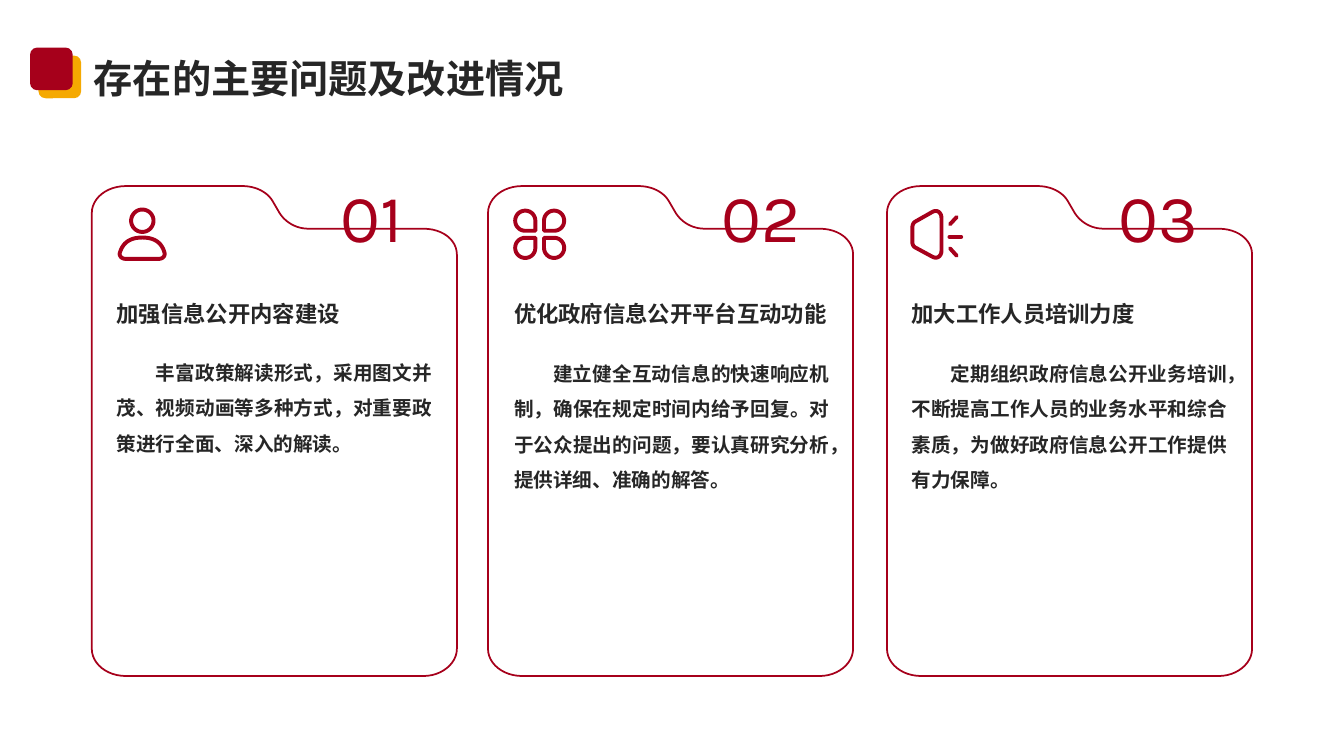
import pptx
import pptx.util
import pptx.dml.color
import pptx.enum.shapes
import pptx.enum.text
import pptx.oxml.ns
import lxml.etree

Pt = pptx.util.Pt
colour = pptx.dml.color.RGBColor.from_string
SHAPE = pptx.enum.shapes.MSO_SHAPE
ALIGN = pptx.enum.text.PP_ALIGN
ANCHOR = pptx.enum.text.MSO_ANCHOR
qn = pptx.oxml.ns.qn
RED, GOLD, DARK, WHITE = "A6001B", "F5A901", "262626", "FFFFFF"
CHINESE = "Noto Sans CJK SC"

deck = pptx.Presentation()
deck.slide_width, deck.slide_height = Pt(960), Pt(540)
slide = deck.slides.add_slide(deck.slide_layouts[5])
shapes = slide.shapes


def outline(left, top, *contours):
    """Closed contours in one shape: a pair is a line, six numbers are a Bezier curve."""
    builder = None
    for start, *segments in contours:
        points = [start]
        for segment in segments:
            if len(segment) == 2:
                points.append(segment)
                continue
            (x0, y0), (x1, y1, x2, y2, x3, y3) = points[-1], segment
            for step in range(1, 13):
                t = step / 12
                a, b, c, d = (1 - t) ** 3, 3 * t * (1 - t) ** 2, 3 * t * t * (1 - t), t ** 3
                points.append((a * x0 + b * x1 + c * x2 + d * x3,
                               a * y0 + b * y1 + c * y2 + d * y3))
        placed = [(Pt(left + x), Pt(top + y)) for x, y in points]
        if builder is None:
            builder = shapes.build_freeform(*placed[0], scale=1.0)
        else:
            builder.move_to(*placed[0])
        builder.add_line_segments(placed[1:], close=True)
    return builder.convert_to_shape()


def write(box, text, size, font, ink, bold, spacing, align, anchor):
    frame = box.text_frame
    frame.text = text
    frame.word_wrap = True
    frame.auto_size = pptx.enum.text.MSO_AUTO_SIZE.NONE
    frame.vertical_anchor = anchor
    frame.margin_left = frame.margin_top = frame.margin_right = frame.margin_bottom = 0
    paragraph = frame.paragraphs[0]
    paragraph.alignment, paragraph.line_spacing = align, spacing
    run = paragraph.runs[0]
    run.font.size, run.font.bold, run.font.name = Pt(size), bold, font
    run.font.color.rgb = colour(ink)
    lxml.etree.SubElement(run.font._element, qn("a:ea")).set("typeface", font)
    return paragraph


# Title and its marker
title = shapes.title
title.left, title.top, title.width, title.height = Pt(67), Pt(35.3), Pt(840), Pt(36.7)
write(title, "存在的主要问题及改进情况", 28, CHINESE, DARK, True, 1.1, ALIGN.LEFT, ANCHOR.MIDDLE)
for left, top, fill in ((27.5, 39.7, GOLD), (21.5, 34, RED)):
    marker = shapes.add_shape(SHAPE.ROUNDED_RECTANGLE, Pt(left), Pt(top), Pt(30.5), Pt(30.5))
    marker.shadow.inherit = False
    marker.fill.solid()
    marker.fill.fore_color.rgb = colour(fill)
    marker.line.fill.background()

# Folder cards
folder_path = (
    (24.5, 0), (107.5, 0), (117, 0, 125.5, 4.3, 129.2, 10.8),
    (134.2, 19.4), (138.5, 26, 146, 30.5, 155, 30.5),
    (237, 30.5), (250.3, 30.5, 260.8, 38.2, 260.8, 49),
    (260.8, 330.5), (260.8, 341.3, 249.8, 350, 236.9, 350),
    (24.5, 350), (10.8, 350, 0, 341.3, 0, 330.5),
    (0, 19.4), (0, 8.6, 10.8, 0, 24.5, 0))
folders = [outline(left, 132.9, folder_path) for left in (65.6, 348.6, 633.6)]

# Person icon: head and shoulders
person = outline(
    85.6, 149.7,
    ((16.1, 0), (20.5, 0, 24.1, 3.6, 24.1, 8), (24.1, 12.4, 20.5, 16, 16.1, 16),
     (11.7, 16, 8.1, 12.4, 8.1, 8), (8.1, 3.6, 11.7, 0, 16.1, 0)),
    ((16.1, 20), (26.4, 20, 30.4, 25, 32, 31), (32.5, 33, 30.7, 35.2, 28.2, 35.2),
     (3.8, 35.2), (1.3, 35.2, -0.5, 33, 0, 31), (1.8, 25, 5.8, 20, 16.1, 20)))

# Clover icon: round petals, each with a corner towards the centre
radius, bend = 7.2, 4
petals = []
for h, v in ((1, 1), (-1, 1), (1, -1), (-1, -1)):
    x, y, rx, ry, bx, by = -10.3 * h, -9.7 * v, radius * h, radius * v, bend * h, bend * v
    petals.append((
        (x + rx, y + ry), (x + rx, y),
        (x + rx, y - by, x + bx, y - ry, x, y - ry),
        (x - bx, y - ry, x - rx, y - by, x - rx, y),
        (x - rx, y + by, x - bx, y + ry, x, y + ry)))
clover = outline(385.5, 167.4, *petals)

# Loudspeaker icon
horn = outline(
    651.7, 150.2,
    ((0, 12.7), (0, 22.6), (0, 24.6, 0.9, 26, 2.3, 26.7),
     (14.3, 33.2), (17.8, 35.2, 20.8, 32.6, 20.8, 29),
     (20.8, 5.5), (20.8, 1.8, 17.8, -0.8, 14.3, 1.2),
     (2.3, 8), (0.9, 8.8, 0, 10.2, 0, 12.7)))
for x1, y1, x2, y2 in ((678.6, 160.2, 683.4, 155), (678.2, 169.2, 686.6, 169.2),
                       (678.6, 177.4, 683.4, 182.7)):
    sound = shapes.add_connector(pptx.enum.shapes.MSO_CONNECTOR.STRAIGHT,
                                 Pt(x1), Pt(y1), Pt(x2), Pt(y2))
    sound.line.color.rgb = colour(RED)
    sound.line.width = Pt(2.8)
    sound.line._get_or_add_ln().set("cap", "rnd")
    lxml.etree.SubElement(sound._element.spPr, qn("a:effectLst"))

# Red outlines for cards and icons
for group, width in ((folders, 1.25), ((person, clover, horn), 2.8)):
    for part in group:
        part.shadow.inherit = False
        part.fill.solid()
        part.fill.fore_color.rgb = colour(WHITE)
        part.line.color.rgb = colour(RED)
        part.line.width = Pt(width)

# Number, heading and text of each card
measures = (
    (249.5, "加强信息公开内容建设",
     "丰富政策解读形式，采用图文并茂、视频动画等多种方式，对重要政策进行全面、深入的解读。"),
    (250.1, "优化政府信息公开平台互动功能",
     "建立健全互动信息的快速响应机制，确保在规定时间内给予回复。对于公众提出的问题，要认真研究分析，提供详细、准确的解答。"),
    (250.1, "加大工作人员培训力度",
     "定期组织政府信息公开业务培训，不断提高工作人员的业务水平和综合素质，为做好政府信息公开工作提供有力保障。"),
)
for index, (detail_top, heading, detail) in enumerate(measures):
    shift = 283.9 * index
    number_box = shapes.add_textbox(Pt(188.5 + shift), Pt(119.5), Pt(99.4), Pt(53.3))
    write(number_box, f"{index + 1:02}", 48, "Karla", RED, False, 1.1, ALIGN.RIGHT, ANCHOR.TOP)
    heading_box = shapes.add_textbox(Pt(83.3 + shift), Pt(198.7), Pt(225.4), Pt(45.4))
    write(heading_box, heading, 16, CHINESE, DARK, True, 1.3, ALIGN.LEFT, ANCHOR.MIDDLE)
    detail_box = shapes.add_textbox(Pt(83.3 + shift), Pt(detail_top), Pt(225.4), Pt(217))
    paragraph = write(detail_box, detail, 14, CHINESE, DARK, True, 1.5, ALIGN.JUSTIFY, ANCHOR.TOP)
    paragraph._p.get_or_add_pPr().set("indent", str(Pt(28)))

deck.save("out.pptx")
